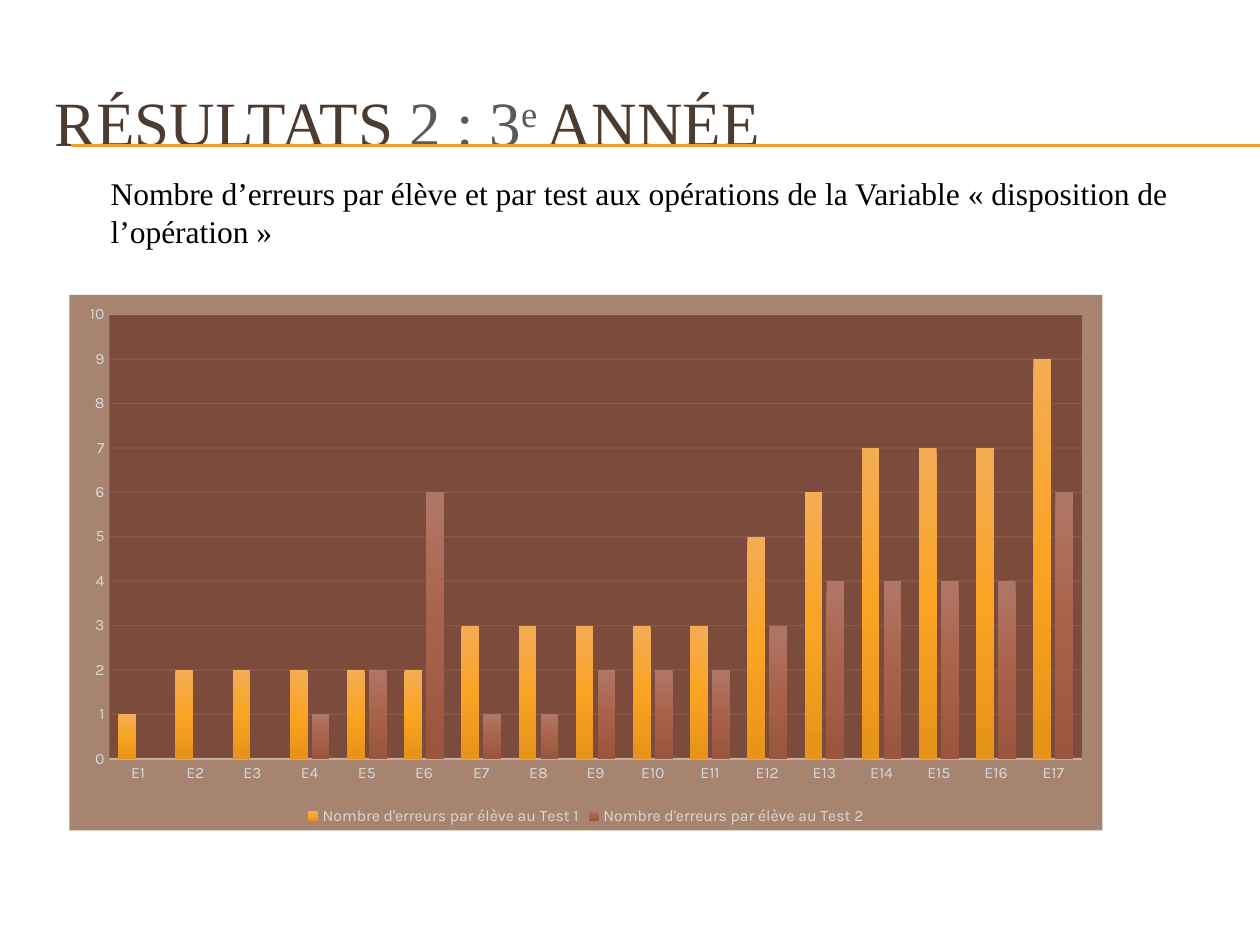
from lxml.etree import SubElement
from pptx import Presentation
from pptx.chart.data import CategoryChartData
from pptx.dml.color import RGBColor
from pptx.enum.chart import XL_CHART_TYPE, XL_LEGEND_POSITION, XL_TICK_MARK
from pptx.enum.shapes import MSO_CONNECTOR
from pptx.enum.text import MSO_ANCHOR, PP_ALIGN
from pptx.oxml import parse_xml
from pptx.oxml.ns import nsdecls, qn
from pptx.util import Inches, Pt

SERIF, SANS = "Times New Roman", "Karla"
BROWN, GREY, PALE, LINE = "4E3B30", "595959", "D9D9D9", "F2F2F2"
GOLD, CHART_FILL, PLOT_FILL = "F0A22E", "A78470", "7C4B3B"
TITLE = [("RÉSULTATS ", BROWN, 0), ("2 : 3", GREY, 0), ("e ", GREY, 30000), ("ANNÉE", BROWN, 0)]
SUBTITLE = ("Nombre d’erreurs par élève et par test aux opérations de la Variable "
            "« disposition de l’opération »")
SERIES = [
    ("Nombre d'erreurs par élève au Test 1",
     [1, 2, 2, 2, 2, 2, 3, 3, 3, 3, 3, 5, 6, 7, 7, 7, 9], ["F4AC55", "FAA424", "E59319"]),
    ("Nombre d'erreurs par élève au Test 2",
     [0, 0, 0, 1, 2, 6, 1, 1, 2, 2, 2, 3, 4, 4, 4, 4, 6], ["B07766", "A9624A", "9A553E"]),
]
RULES = [1.15, 1.16]


def set_font(font, name, size, color):
    font.name, font.size = name, Pt(size)
    font.color.rgb = RGBColor.from_string(color)


def set_line(line, color, width, alpha=100):
    line.color.rgb = RGBColor.from_string(color)
    line.width = Pt(width)
    if alpha < 100:
        clr = next(line._get_or_add_ln().iter(qn("a:srgbClr")))
        SubElement(clr, qn("a:alpha")).set("val", str(alpha * 1000))


def solid_sppr(color):
    return parse_xml(f'<c:spPr {nsdecls("c", "a")}><a:solidFill><a:srgbClr val="{color}"/>'
                     '</a:solidFill><a:ln><a:noFill/></a:ln></c:spPr>')


def set_gradient(fill, colors):
    fill.gradient()
    stops = fill._fill._gradFill.find(qn("a:gsLst"))
    for stop in list(stops):
        stops.remove(stop)
    for i, color in enumerate(colors):
        stop = SubElement(stops, qn("a:gs"), pos=str(i * 50000))
        SubElement(stop, qn("a:srgbClr"), val=color)
    fill.gradient_angle = 270


def add_rule(s, y):
    rule = s.shapes.add_connector(MSO_CONNECTOR.STRAIGHT, Inches(0.56), Inches(y), Inches(10), Inches(y))
    set_line(rule.line, GOLD, 0.75)
    SubElement(rule._element.spPr, qn("a:effectLst"))


def add_title(s):
    sp = s.shapes.title
    sp.left, sp.top, sp.width, sp.height = map(Inches, (0.33, 0.5, 9.5, 0.92))
    tf = sp.text_frame
    tf.vertical_anchor = MSO_ANCHOR.MIDDLE
    p = tf.paragraphs[0]
    p.alignment = PP_ALIGN.LEFT
    for text, color, baseline in TITLE:
        r = p.add_run()
        r.text = text
        set_font(r.font, SERIF, 36, color)
        if baseline:
            r._r.get_or_add_rPr().set("baseline", str(baseline))


def add_subtitle(s):
    sp = s.shapes.add_textbox(Inches(0.78), Inches(1.33), Inches(9.06), Inches(0.71))
    tf = sp.text_frame
    tf.word_wrap = True
    p = tf.paragraphs[0]
    p.text = SUBTITLE
    set_font(p.font, SERIF, 18, "000000")


def add_errors_chart(s):
    data = CategoryChartData()
    data.categories = [f"E{i + 1}" for i in range(len(SERIES[0][1]))]
    for name, values, _ in SERIES:
        data.add_series(name, values)
    chart = s.shapes.add_chart(XL_CHART_TYPE.COLUMN_CLUSTERED, Inches(0.55), Inches(2.34),
                               Inches(8.2), Inches(4.25), data).chart
    chart.has_title = False
    set_font(chart.font, SANS, 10, "000000")
    chart.has_legend = True
    chart.legend.position = XL_LEGEND_POSITION.BOTTOM
    chart.legend.include_in_layout = False
    set_font(chart.legend.font, SANS, 9, PALE)
    plot = chart.plots[0]
    plot.gap_width, plot.overlap, plot.vary_by_categories = 100, -24, False
    for series, (_, _, colors) in zip(plot.series, SERIES):
        series.invert_if_negative = False
        set_gradient(series.format.fill, colors)
    cat, val = chart.category_axis, chart.value_axis
    for axis in (cat, val):
        axis.major_tick_mark = axis.minor_tick_mark = XL_TICK_MARK.NONE
        set_font(axis.tick_labels.font, SANS, 9, PALE)
    val.minimum_scale, val.maximum_scale, val.major_unit = 0, 10, 1
    set_line(cat.format.line, LINE, 1, 54)
    val.format.line.fill.background()
    set_line(val.major_gridlines.format.line, LINE, 0.75, 10)
    body = chart._chartSpace.find(qn("c:chart"))
    body.addnext(solid_sppr(CHART_FILL))
    body.find(qn("c:plotArea")).append(solid_sppr(PLOT_FILL))


def main():
    prs = Presentation()
    prs.slide_width, prs.slide_height = Inches(10), Inches(7.5)
    s = prs.slides.add_slide(prs.slide_layouts[5])
    for y in RULES:
        add_rule(s, y)
    add_title(s)
    add_subtitle(s)
    add_errors_chart(s)
    prs.save("out.pptx")


if __name__ == "__main__":
    main()
